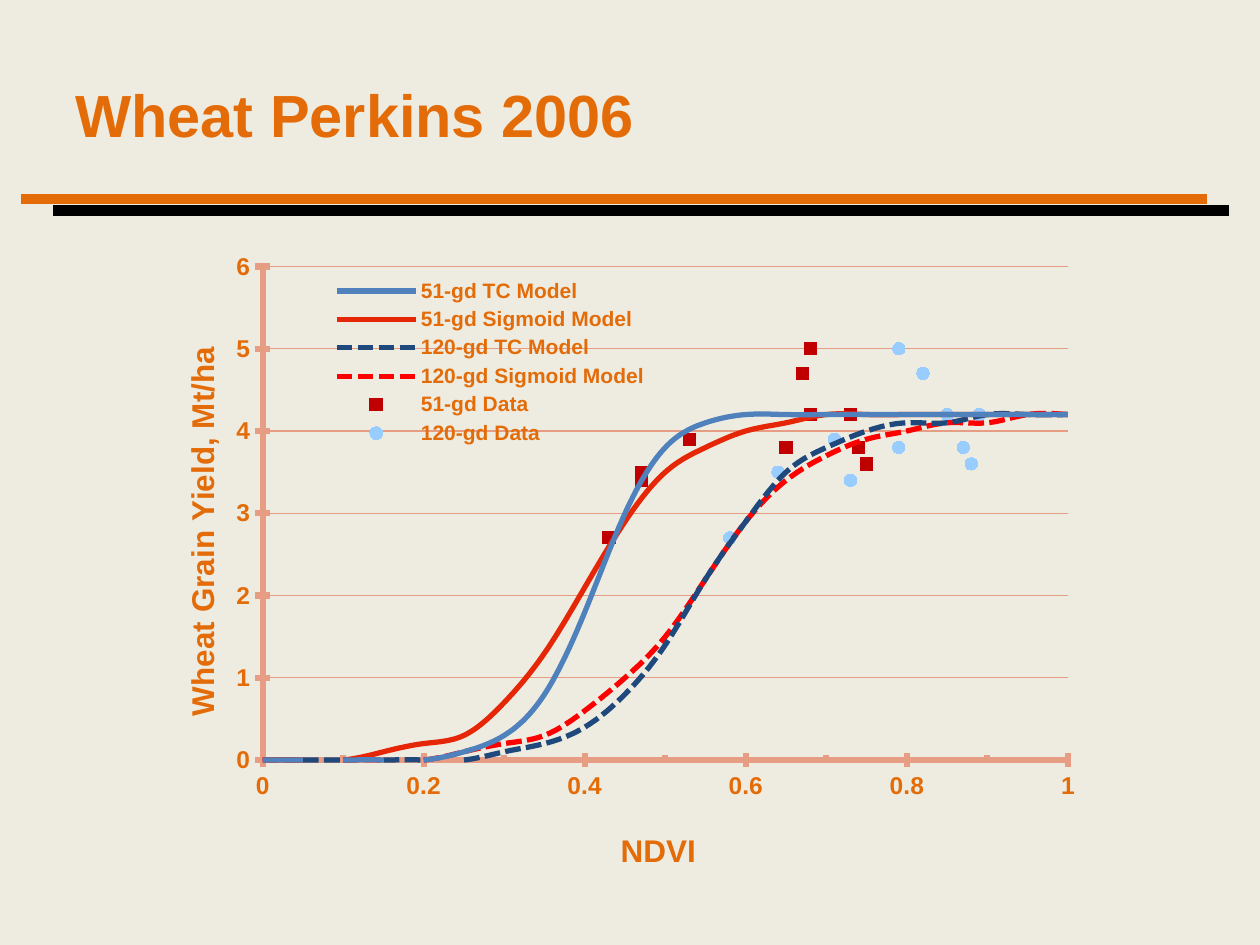
"""Build the Wheat Perkins 2006 slide: yield models and data against NDVI."""
from dataclasses import dataclass
from typing import Optional

from pptx import Presentation
from pptx.chart.axis import ValueAxis
from pptx.chart.chart import Chart
from pptx.chart.data import XyChartData
from pptx.chart.series import XySeries
from pptx.dml.color import RGBColor
from pptx.enum.chart import (XL_CHART_TYPE, XL_LEGEND_POSITION,
                             XL_MARKER_STYLE, XL_TICK_MARK)
from pptx.enum.dml import MSO_LINE
from pptx.enum.shapes import MSO_CONNECTOR
from pptx.enum.text import MSO_ANCHOR, PP_ALIGN
from pptx.oxml import parse_xml
from pptx.oxml.ns import nsdecls, qn
from pptx.oxml.xmlchemy import BaseOxmlElement
from pptx.slide import Slide
from pptx.util import Inches, Pt


@dataclass(frozen=True)
class Theme:
    font: str = "Arial"
    background: str = "EEECE1"
    accent: str = "E36C09"
    shade: str = "000000"
    axis: str = "E79C84"
    title_size: int = 34
    axis_title_size: int = 18
    tick_size: int = 14
    legend_size: int = 12
    rule_width: float = 6
    curve_width: float = 3
    axis_width: float = 3.5
    grid_width: float = 0.75
    marker_size: int = 7


@dataclass(frozen=True)
class Rule:
    left: float
    right: float
    top: float
    color: str


@dataclass(frozen=True)
class YieldSeries:
    name: str
    ndvi: list[float]
    yields: list[float]
    color: str
    dashed: bool = False
    marker: Optional[XL_MARKER_STYLE] = None


@dataclass(frozen=True)
class AxisStyle:
    title: str
    maximum: float
    major: float
    title_left: float
    title_top: float


THEME = Theme()
RULES = [Rule(0.17, 9.58, 1.58, THEME.accent), Rule(0.42, 9.75, 1.67, THEME.shade)]
MODEL_NDVI = [round(step * 0.05, 2) for step in range(21)]
MEASURED_YIELDS = [3.9, 3.8, 4.7, 3.6, 2.7, 5, 3.8, 4.2, 3.5, 3.4, 4.2]
SERIES = [
    YieldSeries("51-gd TC Model", MODEL_NDVI,
                [0, 0, 0, 0, 0, 0.1, 0.3, 0.8, 1.8, 3, 3.8, 4.1] + [4.2] * 9, "4F81BD"),
    YieldSeries("51-gd Sigmoid Model", MODEL_NDVI,
                [0, 0, 0, 0.1, 0.2, 0.3, 0.7, 1.3, 2.1, 2.9, 3.5, 3.8, 4, 4.1] + [4.2] * 7,
                "E52707"),
    YieldSeries("120-gd TC Model", MODEL_NDVI,
                [0, 0, 0, 0, 0, 0, 0.1, 0.2, 0.4, 0.8, 1.4, 2.2, 2.9, 3.5, 3.8, 4, 4.1, 4.1,
                 4.2, 4.2, 4.2], "1F497D", dashed=True),
    YieldSeries("120-gd Sigmoid Model", MODEL_NDVI,
                [0, 0, 0, 0, 0, 0.1, 0.2, 0.3, 0.6, 1, 1.5, 2.2, 2.9, 3.4, 3.7, 3.9, 4, 4.1,
                 4.1, 4.2, 4.2], "FF0000", dashed=True),
    YieldSeries("51-gd Data",
                [0.53, 0.65, 0.67, 0.75, 0.43, 0.68, 0.74, 0.73, 0.47, 0.47, 0.68],
                MEASURED_YIELDS, "C00000", marker=XL_MARKER_STYLE.SQUARE),
    YieldSeries("120-gd Data",
                [0.71, 0.79, 0.82, 0.88, 0.58, 0.79, 0.87, 0.89, 0.64, 0.73, 0.85],
                MEASURED_YIELDS, "99CCFF", marker=XL_MARKER_STYLE.CIRCLE),
]


def set_font(font, size: float) -> None:
    """Apply the bold accent type style."""
    font.name, font.size, font.bold = THEME.font, Pt(size), True
    font.color.rgb = RGBColor.from_string(THEME.accent)


def set_line(line, color: str, width: float) -> None:
    """Give a line its colour and width."""
    line.color.rgb = RGBColor.from_string(color)
    line.width = Pt(width)


def place(element: BaseOxmlElement, **fractions: float) -> None:
    """Set the manual layout of a chart part in fractions of the chart."""
    for layout in element.findall(qn("c:layout")):
        element.remove(layout)
    target = '<c:layoutTarget val="inner"/>' if element.tag == qn("c:plotArea") else ""
    modes = "".join(f'<c:{side}Mode val="edge"/>' for side in "xy")
    values = "".join(f'<c:{key} val="{value}"/>' for key, value in fractions.items())
    layout = parse_xml(f'<c:layout {nsdecls("c")}><c:manualLayout>{target}{modes}{values}'
                       "</c:manualLayout></c:layout>")
    leading = [child for child in element if child.tag in (qn("c:tx"), qn("c:legendPos"))]
    element.insert(len(leading), layout)


def draw_rule(slide: Slide, rule: Rule) -> None:
    """Draw one horizontal rule under the title."""
    connector = slide.shapes.add_connector(
        MSO_CONNECTOR.STRAIGHT, Inches(rule.left), Inches(rule.top),
        Inches(rule.right), Inches(rule.top))
    set_line(connector.line, rule.color, THEME.rule_width)
    connector._element.spPr.append(parse_xml(f'<a:effectLst {nsdecls("a")}/>'))


def draw_title(slide: Slide, text: str) -> None:
    """Fill and place the title placeholder."""
    title = slide.shapes.title
    title.left, title.top = Inches(0.5), Inches(0.3)
    title.width, title.height = Inches(7.92), Inches(1.2)
    title.text_frame.text = text
    title.text_frame.vertical_anchor = MSO_ANCHOR.MIDDLE
    paragraph = title.text_frame.paragraphs[0]
    paragraph.alignment = PP_ALIGN.LEFT
    set_font(paragraph.font, THEME.title_size)


def style_axis(axis: ValueAxis, style: AxisStyle) -> None:
    """Set the scale, ticks, line and title of an axis."""
    axis.minimum_scale, axis.maximum_scale = 0, style.maximum
    axis.major_unit = style.major
    axis.major_tick_mark = XL_TICK_MARK.CROSS
    axis.tick_labels.number_format = "General"
    axis.tick_labels.number_format_is_linked = False
    set_font(axis.tick_labels.font, THEME.tick_size)
    set_line(axis.format.line, THEME.axis, THEME.axis_width)
    axis.axis_title.text_frame.text = style.title
    set_font(axis.axis_title.text_frame.paragraphs[0].font, THEME.axis_title_size)
    place(axis.axis_title._element, x=style.title_left, y=style.title_top)


def style_series(series: XySeries, style: YieldSeries) -> None:
    """Show a series as a smooth curve or as markers alone."""
    series._element.get_or_add_smooth().val = True
    if style.marker is None:
        set_line(series.format.line, style.color, THEME.curve_width)
        series.format.line.dash_style = MSO_LINE.SQUARE_DOT if style.dashed else MSO_LINE.SOLID
        series.marker.style = XL_MARKER_STYLE.NONE
        return
    series.format.line.fill.background()
    series.marker.style = style.marker
    series.marker.size = THEME.marker_size
    series.marker.format.fill.solid()
    series.marker.format.fill.fore_color.rgb = RGBColor.from_string(style.color)
    series.marker.format.line.fill.background()


def draw_chart(slide: Slide) -> Chart:
    """Add the scatter chart of yield against NDVI."""
    data = XyChartData()
    for style in SERIES:
        points = data.add_series(style.name)
        for ndvi, grain_yield in zip(style.ndvi, style.yields):
            points.add_data_point(ndvi, grain_yield)
    chart = slide.shapes.add_chart(
        XL_CHART_TYPE.XY_SCATTER_SMOOTH_NO_MARKERS, Inches(1), Inches(1.92),
        Inches(7.92), Inches(5.05), data).chart
    chart.has_title = False
    set_font(chart.font, THEME.legend_size)
    chart.plots[0].vary_by_categories = False
    for series, style in zip(chart.plots[0].series, SERIES):
        style_series(series, style)
    style_axis(chart.category_axis, AxisStyle("NDVI", 1, 0.2, 0.49, 0.92))
    style_axis(chart.value_axis, AxisStyle("Wheat Grain Yield, Mt/ha", 6, 1, 0.05, 0.16))
    chart.category_axis.has_major_gridlines = False
    chart.category_axis.minor_unit = 0.1
    chart.category_axis.minor_tick_mark = XL_TICK_MARK.INSIDE
    chart.value_axis.minor_tick_mark = XL_TICK_MARK.NONE
    set_line(chart.value_axis.major_gridlines.format.line, THEME.axis, THEME.grid_width)
    chart.has_legend = True
    chart.legend.position = XL_LEGEND_POSITION.RIGHT
    chart.legend.include_in_layout = False
    set_font(chart.legend.font, THEME.legend_size)
    place(chart.legend._element, x=0.2, y=0.05, w=0.33, h=0.28)
    place(chart._chartSpace.chart.plotArea, x=0.137, y=0.039, w=0.807, h=0.78)
    return chart


def main() -> None:
    """Build and save the presentation."""
    presentation = Presentation()
    presentation.slide_width, presentation.slide_height = Inches(10), Inches(7.5)
    slide = presentation.slides.add_slide(presentation.slide_layouts[5])
    slide.background.fill.solid()
    slide.background.fill.fore_color.rgb = RGBColor.from_string(THEME.background)
    for rule in RULES:
        draw_rule(slide, rule)
    draw_title(slide, "Wheat Perkins 2006")
    draw_chart(slide)
    presentation.save("out.pptx")


if __name__ == "__main__":
    main()
